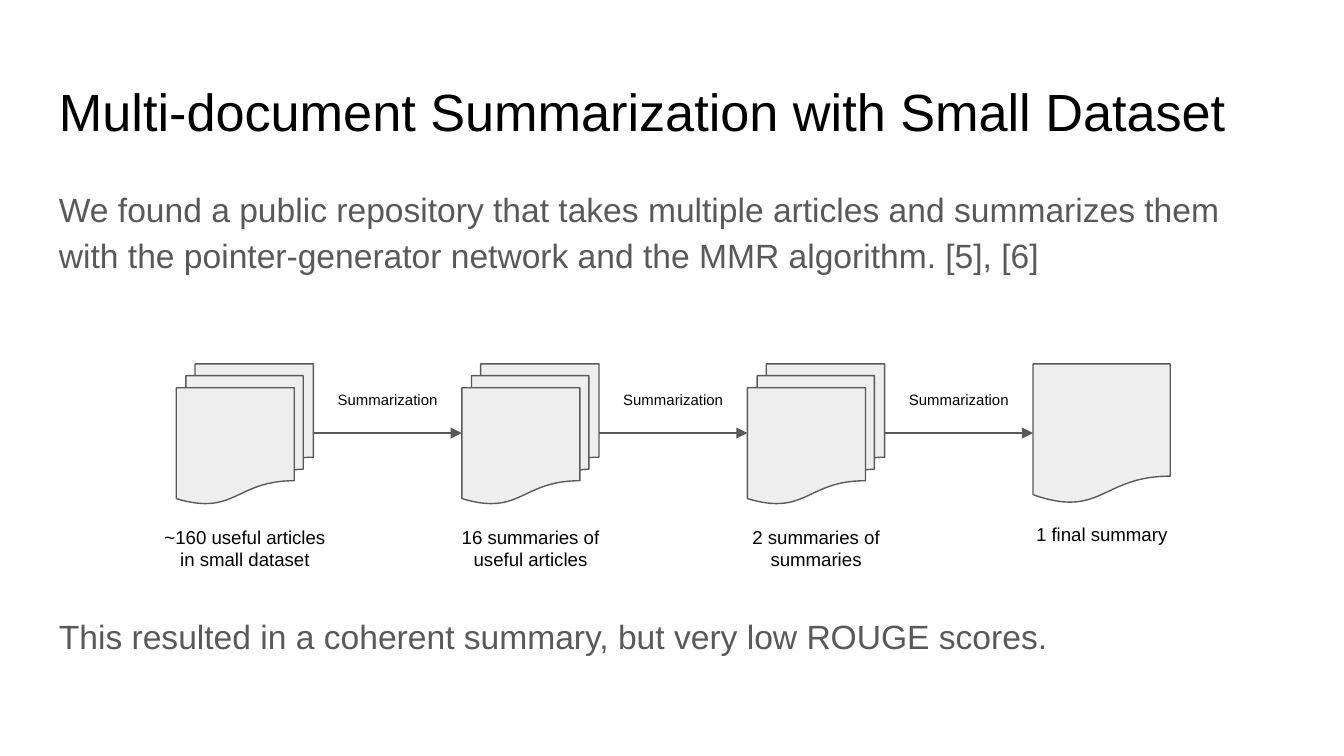
import dataclasses

import pptx
import pptx.dml.color
import pptx.enum.shapes
import pptx.enum.text
import pptx.oxml
import pptx.oxml.ns
import pptx.slide
import pptx.util

Pt = pptx.util.Pt
RGBColor = pptx.dml.color.RGBColor
MSO_SHAPE = pptx.enum.shapes.MSO_SHAPE
PP_ALIGN = pptx.enum.text.PP_ALIGN

BLACK = RGBColor(0x00, 0x00, 0x00)
GREY = RGBColor(0x59, 0x59, 0x59)
PALE = RGBColor(0xEE, 0xEE, 0xEE)
FONT = "Arial"

MARGIN, TEXT_W = 24.5, 671
STAGE_X, STAGE_Y, PITCH = 94.4, 195, 153
DOC_W, DOC_H = 73.5, 75
ARROW_Y = 232
CAPTION_W = 106.6


@dataclasses.dataclass(frozen=True)
class Stage:
    caption: str
    shape: MSO_SHAPE = MSO_SHAPE.FLOWCHART_MULTIDOCUMENT


STAGES = [
    Stage("~160 useful articles in small dataset"),
    Stage("16 summaries of useful articles"),
    Stage("2 summaries of summaries"),
    Stage("1 final summary", MSO_SHAPE.FLOWCHART_DOCUMENT),
]


def add_text(s: pptx.slide.Slide, text: str, *, x: float, y: float, w: float,
             h: float, size: float, color: RGBColor = BLACK,
             align: PP_ALIGN = PP_ALIGN.LEFT, spacing: float = 1.0) -> None:
    tf = s.shapes.add_textbox(Pt(x), Pt(y), Pt(w), Pt(h)).text_frame
    tf.word_wrap = True
    tf.margin_left = tf.margin_right = tf.margin_top = tf.margin_bottom = Pt(7.2)
    p = tf.paragraphs[0]
    p.alignment = align
    p.line_spacing = spacing
    r = p.add_run()
    r.text = text
    r.font.name = FONT
    r.font.size = Pt(size)
    r.font.color.rgb = color


def add_stage(s: pptx.slide.Slide, stage: Stage, x: float) -> None:
    sp = s.shapes.add_shape(stage.shape, Pt(x), Pt(STAGE_Y), Pt(DOC_W), Pt(DOC_H))
    sp.shadow.inherit = False
    sp.fill.solid()
    sp.fill.fore_color.rgb = PALE
    sp.line.color.rgb = GREY
    sp.line.width = Pt(0.75)
    add_text(s, stage.caption, x=x + (DOC_W - CAPTION_W) / 2, y=274.3,
             w=CAPTION_W, h=20, size=10, align=PP_ALIGN.CENTER)


def add_step(s: pptx.slide.Slide, text: str, x: float) -> None:
    gap = PITCH - DOC_W
    sp = s.shapes.add_connector(pptx.enum.shapes.MSO_CONNECTOR.STRAIGHT,
                                Pt(x), Pt(ARROW_Y), Pt(x + gap), Pt(ARROW_Y))
    sp.line.color.rgb = GREY
    sp.line.width = Pt(1.5)
    ln = sp.line._get_or_add_ln()
    pptx.oxml.ns.qn("a:tailEnd")
    ln.append(pptx.oxml.parse_xml(
        f'<a:tailEnd {pptx.oxml.ns.nsdecls("a")} type="triangle"/>'))
    sp._element.spPr.append(pptx.oxml.parse_xml(
        f'<a:effectLst {pptx.oxml.ns.nsdecls("a")}/>'))
    add_text(s, text, x=x + (gap - DOC_W) / 2, y=204.5, w=DOC_W, h=23,
             size=8, align=PP_ALIGN.CENTER)


def main() -> None:
    prs = pptx.Presentation()
    prs.slide_width, prs.slide_height = Pt(720), Pt(405)
    s = prs.slides.add_slide(prs.slide_layouts[6])

    add_text(s, "Multi-document Summarization with Small Dataset",
             x=MARGIN, y=35.3, w=TEXT_W, h=45.4, size=28)
    add_text(s, "We found a public repository that takes multiple articles and "
             "summarizes them with the pointer-generator network and the MMR "
             "algorithm. [5], [6]", x=MARGIN, y=90.7, w=TEXT_W, h=64,
             size=18, color=GREY, spacing=1.15)
    add_text(s, "This resulted in a coherent summary, but very low ROUGE scores.",
             x=MARGIN, y=319.5, w=TEXT_W, h=40, size=18, color=GREY, spacing=1.15)

    for i, stage in enumerate(STAGES):
        x = STAGE_X + i * PITCH
        add_stage(s, stage, x)
        if i < len(STAGES) - 1:
            add_step(s, "Summarization", x + DOC_W)

    prs.save("out.pptx")


if __name__ == "__main__":
    main()
